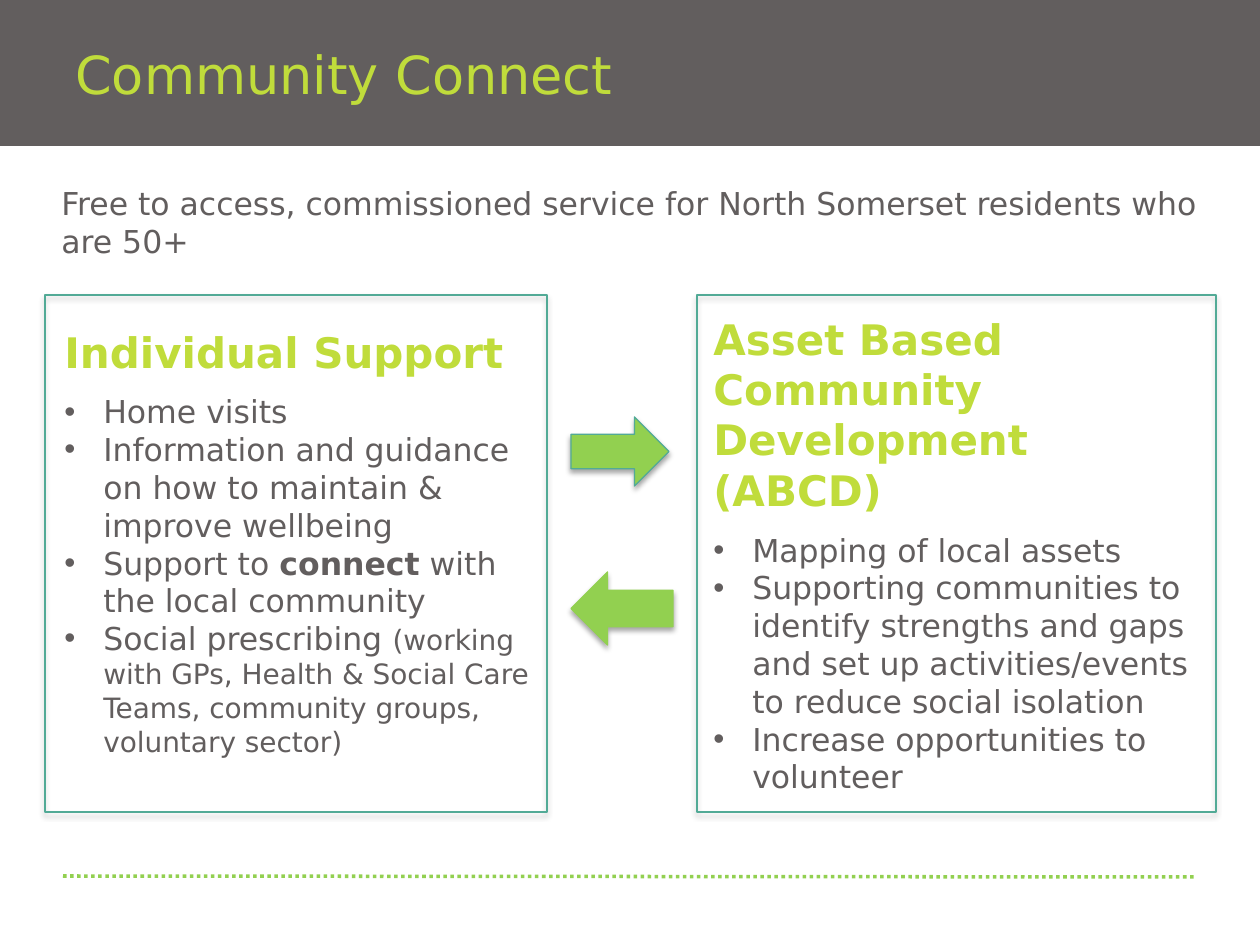
from lxml import etree
from pptx import Presentation
from pptx.dml.color import RGBColor
from pptx.enum.dml import MSO_LINE
from pptx.enum.shapes import MSO_CONNECTOR, MSO_SHAPE
from pptx.enum.text import MSO_ANCHOR
from pptx.oxml.ns import qn
from pptx.util import Pt

RECT, RIGHT, LEFT = MSO_SHAPE.RECTANGLE, MSO_SHAPE.RIGHT_ARROW, MSO_SHAPE.LEFT_ARROW
STRAIGHT, DOTS = MSO_CONNECTOR.STRAIGHT, MSO_LINE.ROUND_DOT
TOP, MIDDLE = MSO_ANCHOR.TOP, MSO_ANCHOR.MIDDLE
SCALE = 914400 / 126
FONT = "DejaVu Sans"
COLORS = {"grey": "625E5E", "lime": "C0DC3B", "green": "92D050", "teal": "52AA96", "black": "000000"}


def px(n):
    return round(n * SCALE)


def rgb(name):
    return RGBColor.from_string(COLORS[name])


def add_run(p, text, size=18, color="grey", bold=False):
    r = p.add_run()
    r.text = text
    r.font.name, r.font.size, r.font.bold = FONT, Pt(size), bold
    r.font.color.rgb = rgb(color)


class Deck:
    def __init__(self, width, height):
        self.prs = Presentation()
        self.prs.slide_width, self.prs.slide_height = px(width), px(height)
        self.s = self.prs.slides.add_slide(self.prs.slide_layouts[6])

    def shape(self, kind, x, y, w, h, fill=None, line=None, shadow=False):
        sp = self.s.shapes.add_shape(kind, px(x), px(y), px(w), px(h))
        sp.shadow.inherit = False
        if fill:
            sp.fill.solid()
            sp.fill.fore_color.rgb = rgb(fill)
        else:
            sp.fill.background()
        if line:
            sp.line.color.rgb = rgb(line)
            sp.line.width = Pt(0.75)
        else:
            sp.line.fill.background()
        if shadow:
            self.drop_shadow(sp)

    def drop_shadow(self, sp):
        effects = sp._element.spPr.find(qn("a:effectLst"))
        shadow = etree.SubElement(effects, qn("a:outerShdw"), blurRad=str(Pt(3.1)),
                                  dist=str(Pt(1.8)), dir="5400000", rotWithShape="0")
        color = etree.SubElement(shadow, qn("a:srgbClr"), val=COLORS["black"])
        etree.SubElement(color, qn("a:alpha"), val="35000")

    def dotted_line(self, x1, y1, x2, y2, color):
        c = self.s.shapes.add_connector(STRAIGHT, px(x1), px(y1), px(x2), px(y2))
        c.line.color.rgb = rgb(color)
        c.line.width = Pt(2)
        c.line.dash_style = DOTS
        etree.SubElement(c._element.spPr, qn("a:effectLst"))

    def text(self, x, y, w, h, text, anchor=TOP, **fmt):
        tf = self.s.shapes.add_textbox(px(x), px(y), px(w), px(h)).text_frame
        tf.word_wrap = True
        tf.vertical_anchor = anchor
        add_run(tf.paragraphs[0], text, **fmt)
        return tf

    def bullets(self, x, y, w, h, heading, items):
        tf = self.text(x, y, w, h, heading, size=24, color="lime", bold=True)
        tf.paragraphs[0].space_after = Pt(9)
        for runs in items:
            p = tf.add_paragraph()
            pPr = p._p.get_or_add_pPr()
            pPr.set("marL", str(px(39)))
            pPr.set("indent", str(px(-39)))
            etree.SubElement(pPr, qn("a:buFont"), typeface="Arial")
            etree.SubElement(pPr, qn("a:buChar"), char="•")
            for text, fmt in runs:
                add_run(p, text, **fmt)


def main():
    deck = Deck(1260, 945)
    deck.shape(RECT, 0, 0, 1260, 146, fill="grey")
    deck.dotted_line(63, 876, 1197, 877, "green")
    deck.text(63, 0, 1134, 146, "Community Connect", anchor=MIDDLE, size=30, color="lime")
    deck.text(49, 178, 1162, 127,
              "Free to access, commissioned service for North Somerset residents who are 50+")

    deck.bullets(701, 307, 504, 505, "Asset Based Community Development (ABCD)", [
        [("Mapping of local assets", {})],
        [("Supporting communities to identify strengths and gaps and set up "
          "activities/events to reduce social isolation", {})],
        [("Increase opportunities to volunteer", {})],
    ])
    deck.bullets(52, 320, 517, 492, "Individual Support", [
        [("Home visits", {})],
        [("Information and guidance on how to maintain & improve wellbeing", {})],
        [("Support to ", {}), ("connect", {"bold": True}), (" with the local community", {})],
        [("Social prescribing ", {}),
         ("(working with GPs, Health & Social Care Teams, community groups, voluntary sector)",
          {"size": 16})],
    ])

    deck.shape(RIGHT, 571, 417, 98, 69, fill="green", line="teal", shadow=True)
    deck.shape(LEFT, 571, 572, 102, 73, fill="green", line="green", shadow=True)
    for x, w in ((45, 502), (697, 519)):
        deck.shape(RECT, x, 295, w, 517, line="teal", shadow=True)

    deck.prs.save("out.pptx")


if __name__ == "__main__":
    main()
